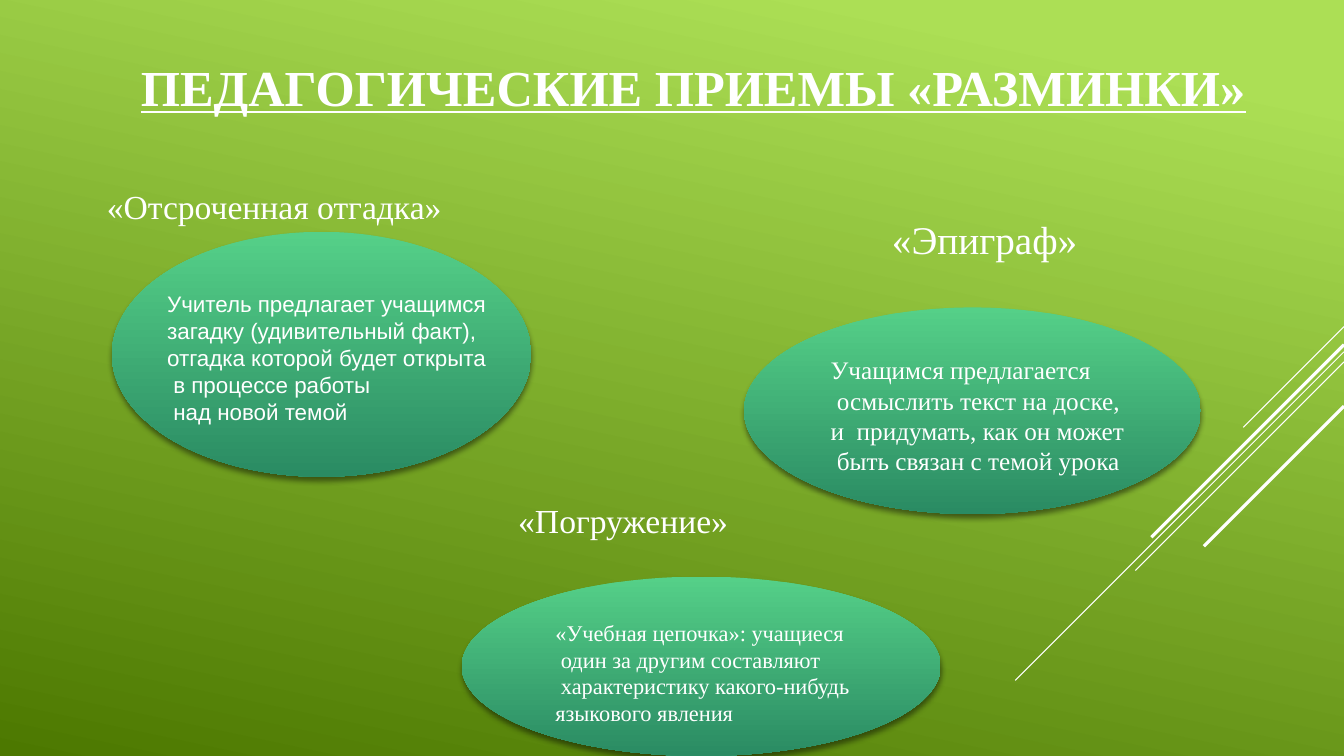
from lxml import etree
from pptx import Presentation
from pptx.dml.color import RGBColor
from pptx.enum.shapes import MSO_CONNECTOR, MSO_SHAPE
from pptx.enum.text import MSO_ANCHOR, PP_ALIGN
from pptx.oxml.ns import qn
from pptx.util import Pt

PX = 9144  # 100 px to the inch
WIDTH, HEIGHT = 1333, 750
STRAIGHT = MSO_CONNECTOR.STRAIGHT
OVAL = MSO_SHAPE.OVAL
MIDDLE, TOP = MSO_ANCHOR.MIDDLE, MSO_ANCHOR.TOP
LEFT, CENTER = PP_ALIGN.LEFT, PP_ALIGN.CENTER
SERIF, SANS = "Times New Roman", "Arial"

COLORS = {
    "text": "FFFFFF",
    "stripe": "FFFFFF",
    "page_light": "ACDF55",
    "page_dark": "4C7800",
    "oval_light": "55D088",
    "oval_dark": "2A8B63",
    "shadow": "000000",
}

# Right-edge y, horizontal (and vertical) run, line width in points
STRIPES = [
    (324, 100, 0.75),
    (349, 326, 0.75),
    (359, 207, 0.75),
    (342, 191, 2.25),
    (403, 139, 2.25),
]

# Boxes are left, top, width, height
TECHNIQUES = [
    {
        "heading": "«Отсроченная отгадка»", "heading_box": (86, 180, 372, 50), "heading_size": 24,
        "oval_box": (111, 230, 416, 243),
        "lines": ["Учитель предлагает учащимся", "загадку (удивительный факт),",
                  "отгадка которой будет открыта", " в процессе работы",
                  " над новой темой"],
        "lines_box": (156, 283, 370, 145), "lines_size": 16, "lines_font": SANS,
    },
    {
        "heading": "«Эпиграф»", "heading_box": (797, 209, 359, 57), "heading_size": 28,
        "oval_box": (738, 305, 453, 205),
        "lines": ["Учащимся предлагается", " осмыслить текст на доске,",
                  "и  придумать, как он может", " быть связан с темой урока"],
        "lines_box": (814, 347, 342, 131), "lines_size": 18, "lines_font": SERIF,
    },
    {
        "heading": "«Погружение»", "heading_box": (458, 491, 320, 50), "heading_size": 24,
        "oval_box": (458, 572, 475, 178),
        "lines": ["«Учебная цепочка»: учащиеся", " один за другим составляют",
                  " характеристику какого-нибудь", "языкового явления"],
        "lines_box": (541, 609, 319, 118), "lines_size": 16, "lines_font": SERIF,
    },
]


def emu(*lengths):
    return [length * PX for length in lengths]


def color(name):
    return RGBColor.from_string(COLORS[name])


def fill_gradient(fill, stops, clockwise_angle):
    fill.gradient()
    fill.gradient_angle = 360 - clockwise_angle
    for stop, (position, name) in zip(fill.gradient_stops, stops):
        stop.position = position
        stop.color.rgb = color(name)


def add_text(page, box, lines, size, font=SERIF, align=LEFT, anchor=TOP, strong=False):
    """Add a text box with one paragraph per line; strong is bold and underlined."""
    frame = page.shapes.add_textbox(*emu(*box)).text_frame
    frame.word_wrap = True
    frame.vertical_anchor = anchor
    for index, line in enumerate(lines):
        para = frame.add_paragraph() if index else frame.paragraphs[0]
        para.alignment = align
        span = para.add_run()
        span.text = line
        span.font.name = font
        span.font.size = Pt(size)
        span.font.bold = strong
        span.font.underline = strong
        span.font.color.rgb = color("text")


def add_stripes(page, right):
    for top, run, weight in STRIPES:
        stripe = page.shapes.add_connector(STRAIGHT, *emu(right, top, right - run, top + run))
        stripe.line.color.rgb = color("stripe")
        stripe.line.width = Pt(weight)
        etree.SubElement(stripe._element.spPr, qn("a:effectLst"))


def add_oval(page, box):
    oval = page.shapes.add_shape(OVAL, *emu(*box))
    fill_gradient(oval.fill, [(0, "oval_light"), (1, "oval_dark")], 90)
    oval.line.fill.background()
    oval.shadow.inherit = False
    effects = oval._element.spPr.find(qn("a:effectLst"))
    shadow = etree.SubElement(effects, qn("a:outerShdw"), blurRad=str(Pt(4)), dist=str(Pt(3)),
                              dir="5400000", rotWithShape="0")
    tint = etree.SubElement(shadow, qn("a:srgbClr"), val=COLORS["shadow"])
    etree.SubElement(tint, qn("a:alpha"), val="46000")


def add_technique(page, technique):
    add_text(page, technique["heading_box"], [technique["heading"]],
             technique["heading_size"], align=CENTER)
    add_oval(page, technique["oval_box"])
    add_text(page, technique["lines_box"], technique["lines"],
             technique["lines_size"], technique["lines_font"])


def main():
    deck = Presentation()
    deck.slide_width, deck.slide_height = emu(WIDTH, HEIGHT)
    page = deck.slides.add_slide(deck.slide_layouts[6])
    fill_gradient(page.background.fill, [(0.1, "page_light"), (1, "page_dark")], 102)
    add_stripes(page, WIDTH)
    add_text(page, (130, 23, 1130, 125), ["ПЕДАГОГИЧЕСКИЕ ПРИЕМЫ «РАЗМИНКИ»"], 36,
             anchor=MIDDLE, strong=True)
    for technique in TECHNIQUES:
        add_technique(page, technique)
    deck.save("out.pptx")


if __name__ == "__main__":
    main()
